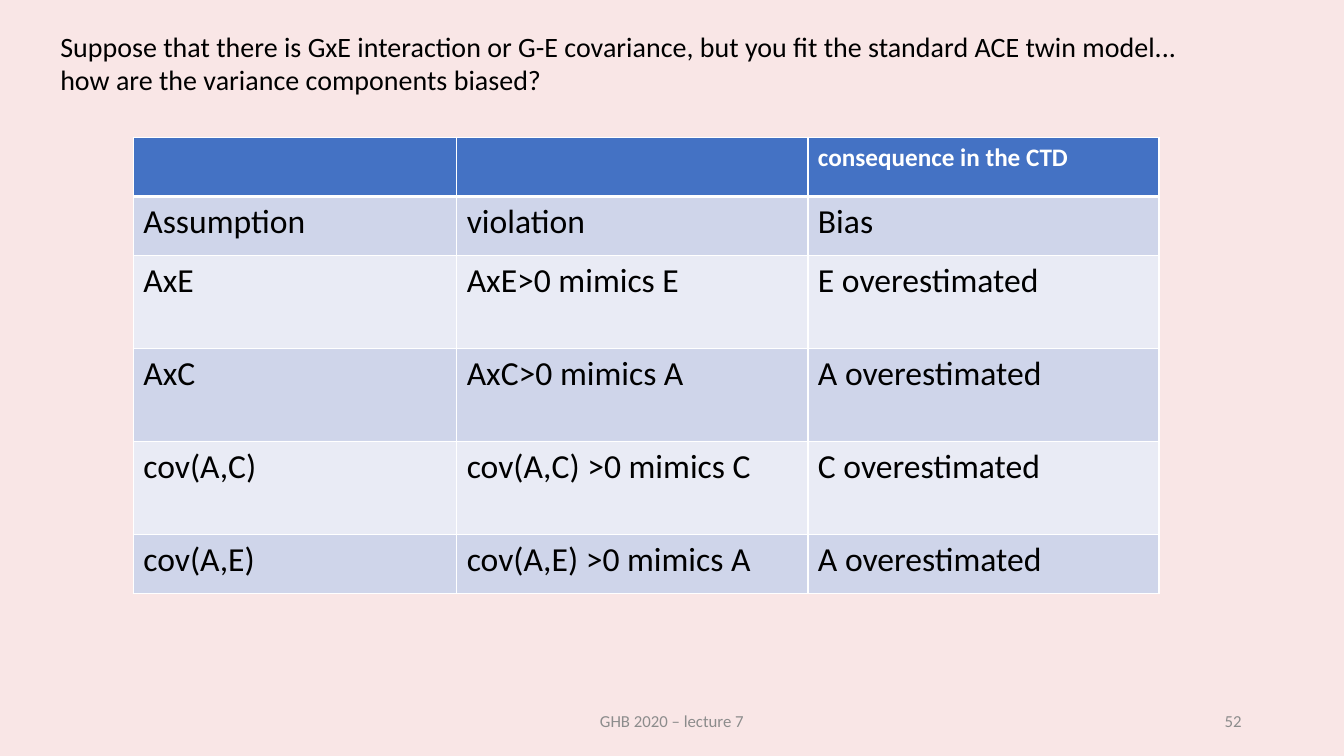
from lxml.etree import SubElement
from pptx import Presentation
from pptx.dml.color import RGBColor
from pptx.enum.text import MSO_ANCHOR, PP_ALIGN
from pptx.oxml.ns import qn
from pptx.util import Cm, Pt

HEADER_BLUE, BAND_DARK, BAND_LIGHT = "4472C4", "CFD5EA", "E9EBF5"
WHITE, BLACK, GREY, PINK = "FFFFFF", "000000", "8C8C8C", "F9E6E6"

QUESTION = [
    "Suppose that there is GxE interaction or G-E covariance, "
    "but you fit the standard ACE twin model...",
    "how are the variance components biased?",
]
BIASES = [
    ["", "", "consequence in the CTD"],
    ["Assumption", "violation", "Bias"],
    ["AxE", "AxE>0 mimics E", "E overestimated"],
    ["AxC", "AxC>0 mimics A", "A overestimated"],
    ["cov(A,C)", "cov(A,C) >0 mimics C", "C overestimated"],
    ["cov(A,E)", "cov(A,E) >0 mimics A", "A overestimated"],
]
LOW_ROW, TALL_ROW = 1.49, 2.34
COLUMN_WIDTHS = [8.15, 8.85, 8.85]
ROW_HEIGHTS = [LOW_ROW] * 2 + [TALL_ROW] * 3 + [LOW_ROW]


def color(value):
    return RGBColor.from_string(value)


class SlideBuilder:
    """Holds the font and the current page; lengths are in centimetres."""

    def __init__(self, page, font_name):
        self.page = page
        self.font_name = font_name

    def background(self, fill_color):
        fill = self.page.background.fill
        fill.solid()
        fill.fore_color.rgb = color(fill_color)

    def style(self, para, size, text_color, bold=False):
        font = para.font
        font.name, font.size, font.bold = self.font_name, Pt(size), bold
        font.color.rgb = color(text_color)

    def text(self, lines, left, top, width, height, size, text_color,
             align=PP_ALIGN.LEFT, anchor=MSO_ANCHOR.TOP, wrap=True):
        box = self.page.shapes.add_textbox(Cm(left), Cm(top), Cm(width), Cm(height))
        frame = box.text_frame
        frame.word_wrap = wrap
        frame.vertical_anchor = anchor
        frame.text = "\n".join(lines)
        for para in frame.paragraphs:
            para.alignment = align
            self.style(para, size, text_color)

    def border(self, cell, side, width):
        line = SubElement(cell._tc.get_or_add_tcPr(), qn(f"a:ln{side}"), w=str(Pt(width)))
        fill = SubElement(line, qn("a:solidFill"))
        SubElement(fill, qn("a:srgbClr"), val=WHITE)

    def table(self, rows, left, top, widths, heights):
        table = self.page.shapes.add_table(
            len(rows), len(widths), Cm(left), Cm(top),
            Cm(sum(widths)), Cm(sum(heights))).table
        for column, width in zip(table.columns, widths):
            column.width = Cm(width)
        for row_index, (texts, height) in enumerate(zip(rows, heights)):
            table.rows[row_index].height = Cm(height)
            for column_index, text in enumerate(texts):
                self.cell(table.cell(row_index, column_index), text, row_index)

    def cell(self, cell, text, row_index):
        is_header = row_index == 0
        # Borders come before the fill; a thick line parts header and body
        for side in "LRTB":
            thick = (side == "B" and row_index == 0) or (side == "T" and row_index == 1)
            self.border(cell, side, 3 if thick else 1)
        band = BAND_DARK if row_index % 2 else BAND_LIGHT
        cell.fill.solid()
        cell.fill.fore_color.rgb = color(HEADER_BLUE if is_header else band)
        cell.text = text
        para = cell.text_frame.paragraphs[0]
        if is_header:
            self.style(para, 18, WHITE, bold=True)
        else:
            self.style(para, 24, BLACK)


def main():
    deck = Presentation()
    deck.slide_width, deck.slide_height = Cm(33.87), Cm(19.05)
    slide = SlideBuilder(deck.slides.add_slide(deck.slide_layouts[6]), "Calibri")
    slide.background(PINK)

    # Footer and page number
    slide.text(["GHB 2020 – lecture 7"], 11.22, 17.66, 11.43, 1.01, 12, GREY,
               PP_ALIGN.CENTER, MSO_ANCHOR.MIDDLE)
    slide.text(["52"], 23.92, 17.66, 7.62, 1.01, 12, GREY,
               PP_ALIGN.RIGHT, MSO_ANCHOR.MIDDLE)

    # Bias table
    slide.table(BIASES, 3.36, 3.46, COLUMN_WIDTHS, ROW_HEIGHTS)

    # Question above the table
    slide.text(QUESTION, 1.27, 0.61, 28.9, 1.96, 20, BLACK, wrap=False)

    deck.save("out.pptx")


if __name__ == "__main__":
    main()
